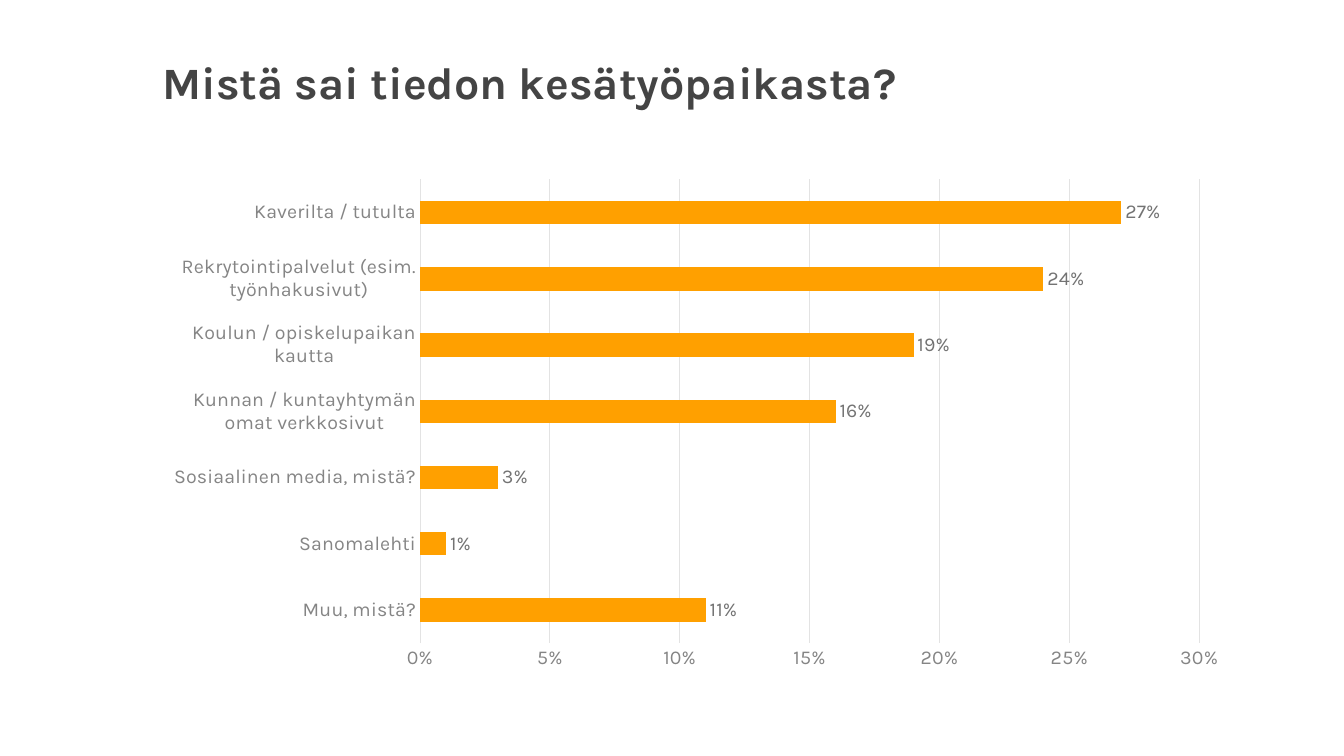
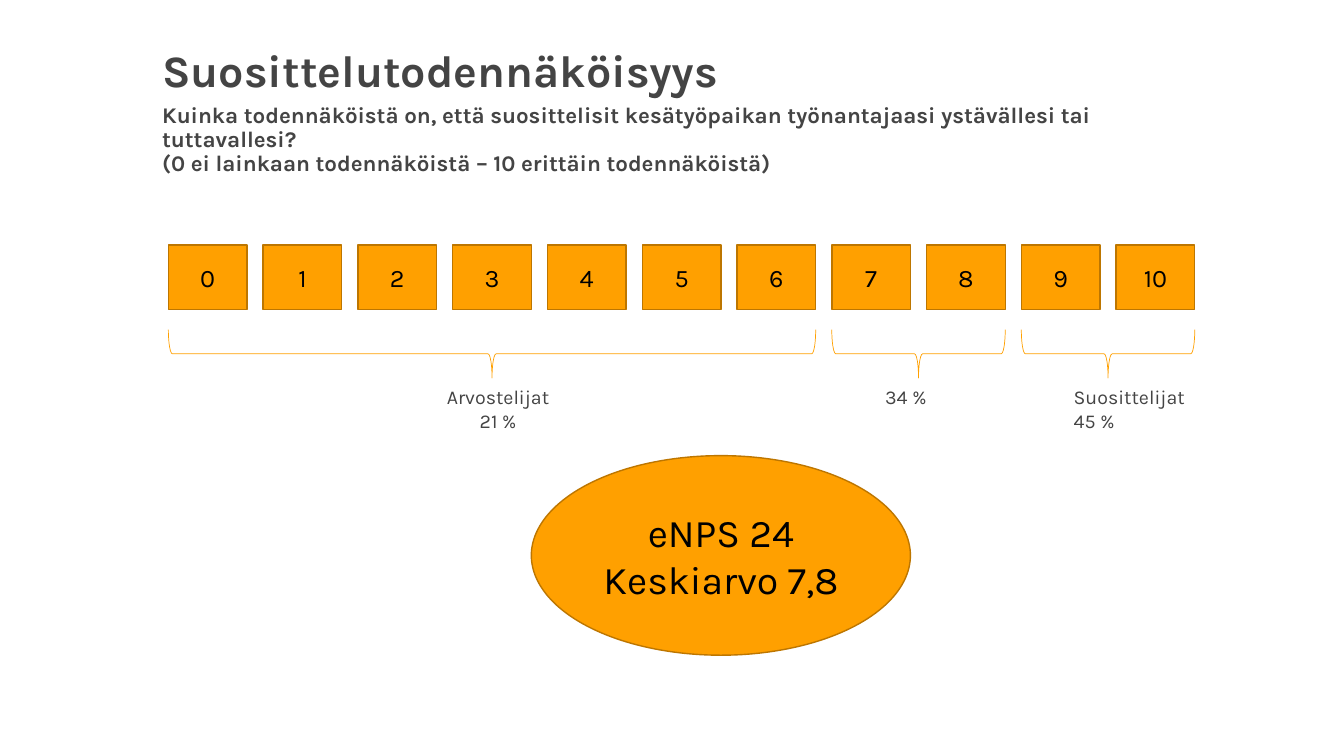
from pptx import Presentation
from pptx.chart.data import CategoryChartData
from pptx.dml.color import RGBColor
from pptx.enum.chart import XL_CHART_TYPE as CHART, XL_LABEL_POSITION as LABEL_POS, XL_TICK_MARK as TICK
from pptx.enum.shapes import MSO_SHAPE as SHAPE
from pptx.enum.text import MSO_ANCHOR as ANCHOR, PP_ALIGN as ALIGN
from pptx.util import Inches, Pt

FONT = "Karla"
ORANGE = RGBColor(0xFF, 0xA0, 0x00)
BROWN = RGBColor(0xBD, 0x76, 0x00)
DARK = RGBColor(0x44, 0x44, 0x44)
GREY = RGBColor(0x85, 0x85, 0x85)
LABEL_GREY = RGBColor(0x73, 0x73, 0x73)
GRID = RGBColor(0xE3, 0xE3, 0xE3)
BLACK = RGBColor(0, 0, 0)

LEFT, WIDTH = 1.51, 10.79
SOURCES = [
    ("Muu, mistä?", 0.11),
    ("Sanomalehti", 0.01),
    ("Sosiaalinen media, mistä?", 0.03),
    ("Kunnan / kuntayhtymän omat verkkosivut", 0.16),
    ("Koulun / opiskelupaikan kautta", 0.19),
    ("Rekrytointipalvelut (esim. työnhakusivut)", 0.24),
    ("Kaverilta / tutulta", 0.27),
]
GROUPS = [
    (0, 6, ["Arvostelijat", "21 %"], 4.33, 1.22, ALIGN.CENTER),
    (7, 8, ["34 %"], 8.68, 0.71, ALIGN.LEFT),
    (9, 10, ["Suosittelijat", "45 %"], 10.55, 1.37, ALIGN.LEFT),
]


def set_attrs(obj, **values):
    """Set each named attribute of an object."""
    for name, value in values.items():
        setattr(obj, name, value)


def set_font(font, size, color, bold=False):
    """Give a font the shared typeface with a size and colour."""
    set_attrs(font, name=FONT, size=Pt(size), bold=bold)
    font.color.rgb = color


def write(sp, lines, size, color, align=ALIGN.LEFT, anchor=ANCHOR.TOP):
    """Write one paragraph per line into a shape."""
    tf = sp.text_frame
    set_attrs(tf, word_wrap=True, vertical_anchor=anchor)
    for i, line in enumerate(lines):
        p = tf.add_paragraph() if i else tf.paragraphs[0]
        p.alignment = align
        r = p.add_run()
        r.text = line
        set_font(r.font, size, color)


def add_title(s, title, height, subtitle=()):
    """Add the bold title with optional smaller lines below it."""
    sp = s.shapes.add_textbox(*map(Inches, (LEFT, 0.27, WIDTH, height)))
    write(sp, [title, *subtitle], 16, DARK, anchor=ANCHOR.MIDDLE)
    paragraphs = sp.text_frame.paragraphs
    for p in paragraphs:
        p.line_spacing = 0.9
        p.runs[0].font.bold = True
    paragraphs[0].runs[0].font.size = Pt(32)
    if subtitle:
        paragraphs[1].space_before = Pt(5)


def add_shape(s, kind, box, line_color, line_width, fill=None):
    """Add a flat preset shape with an outline and optional fill."""
    sp = s.shapes.add_shape(kind, *map(Inches, box))
    sp.shadow.inherit = False
    if fill is None:
        sp.fill.background()
    else:
        sp.fill.solid()
        sp.fill.fore_color.rgb = fill
    sp.line.color.rgb = line_color
    sp.line.width = Pt(line_width)
    return sp


def add_source_chart(s, x, y, w, h):
    """Add the bar chart of information sources in the given box."""
    data = CategoryChartData(number_format="0%")
    data.categories = [name for name, _ in SOURCES]
    data.add_series("Series 1", [value for _, value in SOURCES])
    chart = s.shapes.add_chart(CHART.BAR_CLUSTERED, *map(Inches, (x, y, w, h)), data).chart
    set_attrs(chart, has_legend=False, has_title=False)
    set_font(chart.font, 10, DARK)

    cat, val = chart.category_axis, chart.value_axis
    for axis in (cat, val):
        set_attrs(axis, major_tick_mark=TICK.NONE, minor_tick_mark=TICK.NONE)
        set_font(axis.tick_labels.font, 14, GREY)
    set_attrs(val, minimum_scale=0, maximum_scale=0.3, major_unit=0.05, has_major_gridlines=True)
    set_attrs(val.tick_labels, number_format="0%", number_format_is_linked=False)
    val.format.line.fill.background()
    for line in (cat.format.line, val.major_gridlines.format.line):
        line.color.rgb = GRID
        line.width = Pt(0.75)

    plot = chart.plots[0]
    set_attrs(plot, gap_width=182, vary_by_categories=False, has_data_labels=True)
    fill = plot.series[0].format.fill
    fill.solid()
    fill.fore_color.rgb = ORANGE
    labels = plot.data_labels
    set_attrs(labels, show_value=True, number_format="0%", number_format_is_linked=False,
              position=LABEL_POS.OUTSIDE_END)
    set_font(labels.font, 14, LABEL_GREY)


def add_scale(s, x, y, cell_w=0.78, cell_h=0.64, pitch=0.94):
    """Add the 0 to 10 scale with braces and group labels below it."""
    for score in range(11):
        sp = add_shape(s, SHAPE.RECTANGLE, (x + score * pitch, y, cell_w, cell_h), BROWN, 1, ORANGE)
        write(sp, [str(score)], 18, BLACK, ALIGN.CENTER, ANCHOR.MIDDLE)
    depth, brace_y = 0.48, y + 1.08
    for first, last, lines, label_x, label_w, align in GROUPS:
        span = (last - first) * pitch + cell_w
        center = x + first * pitch + span / 2
        box = (center - depth / 2, brace_y - span / 2, depth, span)
        add_shape(s, SHAPE.LEFT_BRACE, box, ORANGE, 0.5).rotation = 270
        label_h = 0.11 + 0.23 * len(lines)
        sp = s.shapes.add_textbox(*map(Inches, (label_x, y + 1.34, label_w, label_h)))
        write(sp, lines, 14, DARK, align)


def add_result(s, x, y, w, h):
    """Add the ellipse with the overall result."""
    sp = add_shape(s, SHAPE.OVAL, (x, y, w, h), BROWN, 1, ORANGE)
    write(sp, ["eNPS 24", "Keskiarvo 7,8"], 28, BLACK, ALIGN.CENTER, ANCHOR.MIDDLE)


def build_sources(s):
    """Build the slide on where the summer job was found."""
    add_title(s, "Mistä sai tiedon kesätyöpaikasta?", 1.15)
    add_source_chart(s, LEFT, 1.68, WIDTH, 5.07)


def build_recommendation(s):
    """Build the slide on the likelihood of recommending."""
    add_title(s, "Suosittelutodennäköisyys", 1.69, [
        "Kuinka todennäköistä on, että suosittelisit kesätyöpaikan työnantajaasi "
        "ystävällesi tai tuttavallesi?",
        "(0 ei lainkaan todennäköistä – 10 erittäin todennäköistä)",
    ])
    add_scale(s, 1.67, 2.43)
    add_result(s, 5.27, 4.52, 3.76, 1.98)


def main():
    """Build and save the presentation."""
    prs = Presentation()
    set_attrs(prs, slide_width=Inches(13.33), slide_height=Inches(7.5))
    for build in (build_sources, build_recommendation):
        build(prs.slides.add_slide(prs.slide_layouts[6]))
    prs.save("out.pptx")


if __name__ == "__main__":
    main()
